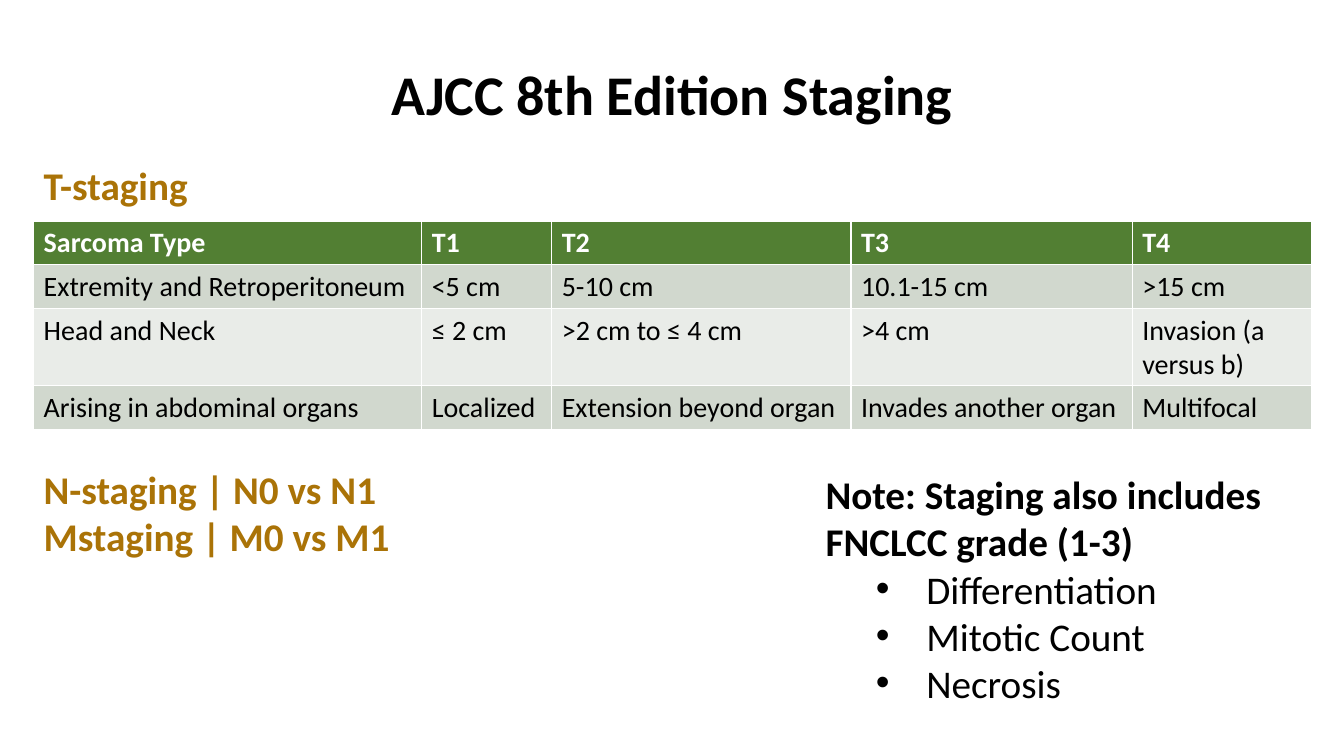
"""Build the AJCC 8th edition sarcoma staging slide."""
from lxml.etree import SubElement
from pptx import Presentation
from pptx.dml.color import RGBColor
from pptx.enum.text import MSO_ANCHOR as Anchor, MSO_AUTO_SIZE as AutoSize, PP_ALIGN as Align
from pptx.oxml.ns import qn
from pptx.util import Pt


def rgb(value):
    return RGBColor.from_string(value)


def write(paragraph, text, size=28, color="000000", bold=True, align=Align.LEFT,
          level=0, bullet=None):
    paragraph.text = text
    paragraph.alignment = align
    paragraph.level = level
    paragraph.space_before = Pt(0)
    properties = paragraph._p.get_or_add_pPr()
    properties.set("marL", str(Pt(72 * level)))
    properties.set("indent", str(Pt(-36 * level)))
    if bullet:
        SubElement(properties, qn("a:buFont"), typeface="Arial")
        SubElement(properties, qn("a:buChar"), char=bullet)
    else:
        SubElement(properties, qn("a:buNone"))
    font = paragraph.font
    font.name, font.size, font.bold = "Calibri", Pt(size), bold
    font.color.rgb = rgb(color)


GOLD = "AA7307"
LEFT = Pt(24)
BLOCK_WIDTH = Pt(363.6)

deck = Presentation()
deck.slide_width, deck.slide_height = Pt(960), Pt(540)
slide = deck.slides.add_slide(deck.slide_layouts[1])

title = slide.shapes.title
title.left, title.top, title.width, title.height = Pt(48), Pt(21.6), Pt(864), Pt(90)
title.text_frame.vertical_anchor = Anchor.MIDDLE
write(title.text_frame.paragraphs[0], "AJCC 8th Edition Staging", size=40, align=Align.CENTER)

headings = [
    (111.6, 74.9, ["T-staging"]),
    (329, 108.7, ["N-staging | N0 vs N1", "Mstaging | M0 vs M1"]),
]
for top, height, lines in headings:
    heading = slide.shapes.add_textbox(LEFT, Pt(top), BLOCK_WIDTH, Pt(height)).text_frame
    heading.word_wrap = True
    for index, line in enumerate(lines):
        write(heading.add_paragraph() if index else heading.paragraphs[0], line, color=GOLD)

stages = [
    ["Sarcoma Type", "T1", "T2", "T3", "T4"],
    ["Extremity and Retroperitoneum", "<5 cm", "5-10 cm", "10.1-15 cm", ">15 cm"],
    ["Head and Neck", "≤ 2 cm", ">2 cm to ≤ 4 cm", ">4 cm", "Invasion (a versus b)"],
    ["Arising in abdominal organs", "Localized", "Extension beyond organ",
     "Invades another organ", "Multifocal"],
]
column_widths = [277.2, 92.9, 213.8, 200.9, 128.2]
row_heights = [31, 31, 55, 31]
row_fills = ["527F33", "D1D8CE", "E9ECE8", "D1D8CE"]
staging = slide.shapes.add_table(len(stages), len(column_widths), LEFT, Pt(157.9),
                                 Pt(sum(column_widths)), Pt(sum(row_heights))).table
for column, width in zip(staging.columns, column_widths):
    column.width = Pt(width)
for row, height, fill, texts in zip(staging.rows, row_heights, row_fills, stages):
    row.height = Pt(height)
    header = texts is stages[0]
    for cell, text in zip(row.cells, texts):
        cell.fill.solid()
        cell.fill.fore_color.rgb = rgb(fill)
        write(cell.text_frame.paragraphs[0], text, size=20, bold=header,
              color="FFFFFF" if header else "000000")

note = slide.placeholders[1]
note.left, note.top, note.width, note.height = Pt(582.5), Pt(332.6), BLOCK_WIDTH, Pt(211)
note.text_frame.auto_size = AutoSize.NONE
write(note.text_frame.paragraphs[0], "Note: Staging also includes FNCLCC grade (1-3)")
for criterion in ["Differentiation", "Mitotic Count", "Necrosis"]:
    write(note.text_frame.add_paragraph(), criterion, bold=False, level=1, bullet="•")

deck.save("out.pptx")
